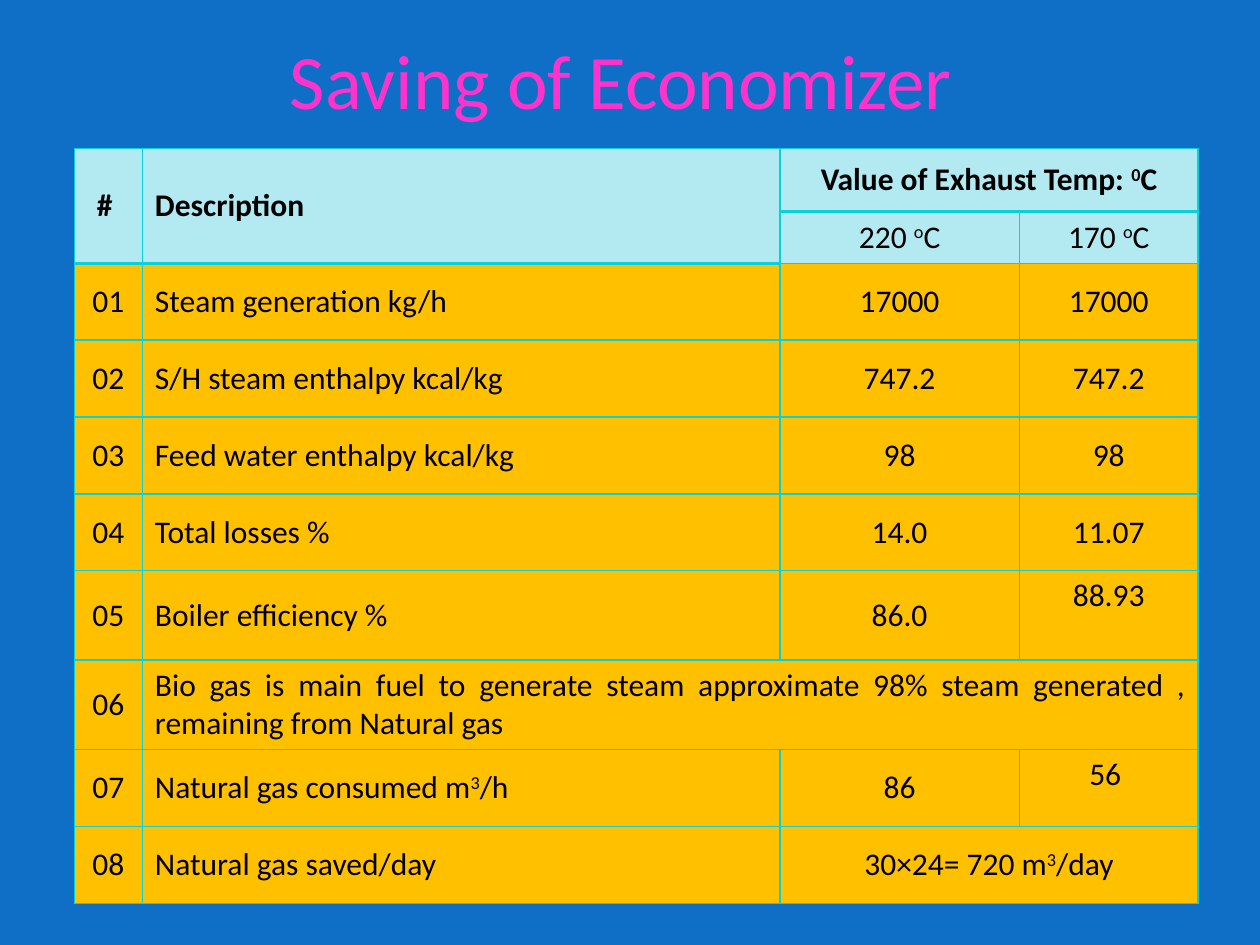
from dataclasses import dataclass

from lxml.etree import SubElement
from pptx import Presentation
from pptx.dml.color import RGBColor
from pptx.enum.text import MSO_ANCHOR, PP_ALIGN
from pptx.oxml.ns import qn
from pptx.util import Inches, Pt


@dataclass(frozen=True)
class Theme:
    """Colours, font and type sizes."""
    back: str = "0F6FC6"
    title: str = "FF33CC"
    ink: str = "000000"
    head: str = "B3EAF2"
    body: str = "FFC000"
    rule: str = "0BD0D9"
    font: str = "Calibri"
    large: int = 44
    small: int = 18
    thin: int = 1
    thick: int = 2


class Deck:
    """Holds the theme and the current slide."""

    def __init__(self, theme):
        """Open a slide with a plain background."""
        self.theme = theme
        self.show = Presentation()
        self.show.slide_width, self.show.slide_height = Inches(10), Inches(7.5)
        self.slide = self.show.slides.add_slide(self.show.slide_layouts[5])
        self.paint(self.slide.background.fill, theme.back)

    def paint(self, fill, tint):
        """Give a fill one solid colour."""
        fill.solid()
        fill.fore_color.rgb = RGBColor.from_string(tint)

    def label(self, frame, text, size, tint, align, bold=False):
        """Set one paragraph, raising what stands between carets."""
        line = frame.paragraphs[0]
        line.alignment = align
        form = {"name": self.theme.font, "size": Pt(size), "bold": bold}
        for i, part in enumerate(text.split("^")):
            run = line.add_run()
            run.text = part
            for key, value in form.items():
                setattr(run.font, key, value)
            run.font.color.rgb = RGBColor.from_string(tint)
            if i % 2:
                run.font._element.set("baseline", "30000")

    def title(self, text, box):
        """Place and fill the title."""
        shape = self.slide.shapes.title
        for key, value in zip(("left", "top", "width", "height"), box):
            setattr(shape, key, Inches(value))
        shape.text_frame.vertical_anchor = MSO_ANCHOR.MIDDLE
        self.label(shape.text_frame, text, self.theme.large, self.theme.title,
                   PP_ALIGN.CENTER)

    def edge(self, cell, base):
        """Rule the four sides of a cell."""
        props = cell._tc.get_or_add_tcPr()
        for side in "LRTB":
            wide = base if side == "B" else self.theme.thin
            line = SubElement(props, qn(f"a:ln{side}"), w=str(Pt(wide)))
            fill = SubElement(line, qn("a:solidFill"))
            SubElement(fill, qn("a:srgbClr"), val=self.theme.rule)

    def table(self, spot, cols, rows, data, spans, heads, tops, full):
        """Build a ruled table with merged cells."""
        look = self.theme
        left, top = map(Inches, spot)
        grid = self.slide.shapes.add_table(
            len(rows), len(cols), left, top,
            Inches(sum(cols)), Inches(sum(rows))).table
        grid.first_row = grid.horz_banding = False
        for col, wide in zip(grid.columns, cols):
            col.width = Inches(wide)
        for row, high in zip(grid.rows, rows):
            row.height = Inches(high)
        for first, last in spans:
            grid.cell(*first).merge(grid.cell(*last))
        for r, row in enumerate(data):
            for c, text in enumerate(row):
                cell = grid.cell(r, c)
                bold = r == 0
                thick = bold or (r < heads and c < 2)
                self.edge(cell, look.thick if thick else look.thin)
                self.paint(cell.fill, look.head if r < heads else look.body)
                high = (r, c) in tops
                cell.vertical_anchor = MSO_ANCHOR.TOP if high else MSO_ANCHOR.MIDDLE
                align = PP_ALIGN.LEFT if c == 1 else PP_ALIGN.CENTER
                if (r, c) == full:
                    align = PP_ALIGN.JUSTIFY
                if text:
                    self.label(cell.text_frame, text, look.small, look.ink,
                               align, bold)


def main():
    """Build and save the slide."""
    deck = Deck(Theme())
    deck.title("Saving of Economizer ", (0.5, 0, 9, 1.25))
    items = [
        ("Steam generation kg/h", "17000", "17000"),
        ("S/H steam enthalpy kcal/kg", "747.2", "747.2"),
        ("Feed water enthalpy kcal/kg", "98", "98"),
        ("Total losses %", "14.0", "11.07"),
        ("Boiler efficiency %", "86.0", "88.93"),
        ("Bio gas is main fuel to generate steam approximate 98% steam "
         "generated , remaining from Natural gas ", "", ""),
        ("Natural gas consumed m^3^/h", "86", "56 "),
        ("Natural gas saved/day", "30×24= 720 m^3^/day", ""),
    ]
    data = [("# ", "Description", "Value of Exhaust Temp: ^0^C", ""),
            ("", "", "220 ^o^C", "170 ^o^C")]
    data += [(f"{n:02}", *item) for n, item in enumerate(items, 1)]
    deck.table(
        spot=(0.59, 1.18),
        cols=(0.54, 5.06, 1.9, 1.42),
        rows=[0.5, 0.41] + [0.61] * 4 + [0.71] * 2 + [0.61] * 2,
        data=data,
        spans=[((0, 0), (1, 0)), ((0, 1), (1, 1)), ((0, 2), (0, 3)),
               ((7, 1), (7, 3)), ((9, 2), (9, 3))],
        heads=2, tops={(6, 3), (8, 3)}, full=(7, 1))
    deck.show.save("out.pptx")


if __name__ == "__main__":
    main()
